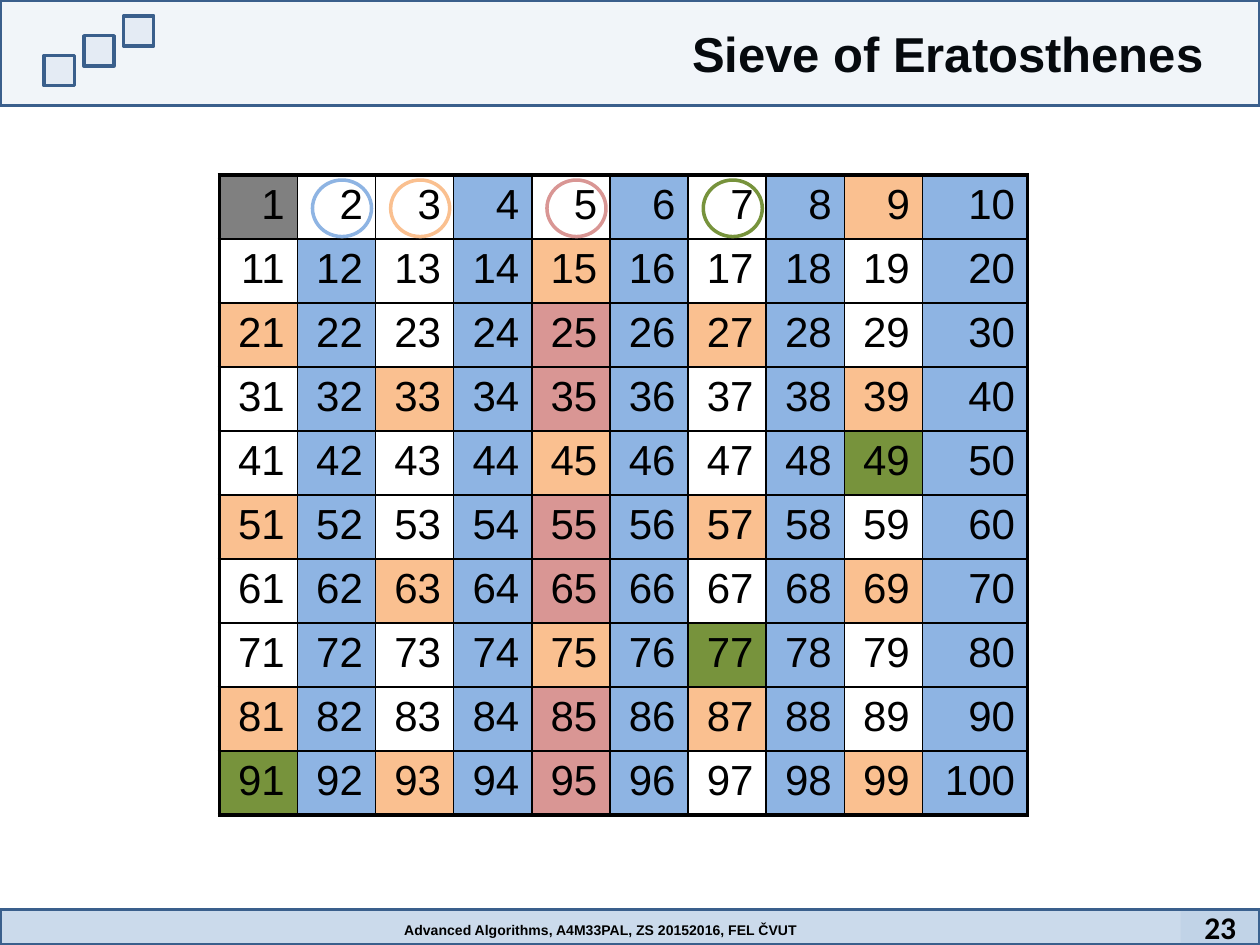
from lxml import etree
from pptx import Presentation
from pptx import util as u
from pptx.dml.color import RGBColor
from pptx.enum import shapes, text
from pptx.oxml.ns import qn

# Content
TITLE = "Sieve of Eratosthenes"
FOOTER = "Advanced Algorithms, A4M33PAL, ZS 20152016, FEL ČVUT"
PAGE = "23"
SIZE = 10
SIEVING_PRIMES = (2, 3, 5, 7)

THEME = {
    "font": "Arial", "page_font": "Calibri",
    "title": 28, "number": 24, "footer": 8, "page": 18,
    "ink": "000000", "one": "808080", "band": "4F81BD", "edge": "3A5F8C",
    "primes": {2: "8EB4E3", 3: "FAC090", 5: "D99694", 7: "77933C"},
    "thin": 1, "thick": 2.25, "outline": 2,
}

# Geometry in centimetres
SLIDE_W, SLIDE_H = 25.4, 19.05
HEADER_H, FOOTER_H = 2.13, 0.71
TABLE_X, TABLE_Y, TABLE_W, ROW_H = 4.42, 3.53, 16.3, 1.29
LAST_COL_W = 2.12
COL_W = (TABLE_W - LAST_COL_W) / (SIZE - 1)
RING_X, RING_Y, RING_W, RING_H = 6.3, 3.63, 1.19, 1.14
SQUARE, SQUARE_X, SQUARE_Y, SQUARE_STEP = 0.61, 0.89, 1.12, (0.8, -0.4)


def color(value):
    return RGBColor.from_string(value)


def box(*lengths):
    return [u.Cm(length) for length in lengths]


def write(frame, words, size, align, font=THEME["font"], bold=True):
    frame.text = words
    paragraph = frame.paragraphs[0]
    paragraph.alignment = align
    paragraph.font.name = font
    paragraph.font.size = u.Pt(size)
    paragraph.font.bold = bold
    paragraph.font.color.rgb = color(THEME["ink"])


def add_figure(slide, kind, place, line=None, opacity=None):
    """Add a shape with an optional outline and translucent fill."""
    shape = slide.shapes.add_shape(kind, *box(*place))
    shape.shadow.inherit = False
    if opacity is None:
        shape.fill.background()
    else:
        shape.fill.solid()
        shape.fill.fore_color.rgb = color(THEME["band"])
        tint = shape.fill._xPr.find(".//" + qn("a:srgbClr"))
        etree.SubElement(tint, qn("a:alpha"), val=str(opacity * 1000))
    if line:
        shape.line.color.rgb = color(line)
        shape.line.width = u.Pt(THEME["outline"])
    else:
        shape.line.fill.background()
    return shape


def cell_color(number):
    """Colour of the prime that strikes the number out, if any."""
    if number == 1:
        return THEME["one"]
    for prime in SIEVING_PRIMES:
        if number > prime and number % prime == 0:
            return THEME["primes"][prime]
    return None


def set_borders(cell, row, col):
    properties = cell._tc.get_or_add_tcPr()
    outer = {"lnL": col == 0, "lnR": col == SIZE - 1,
             "lnT": row == 0, "lnB": row == SIZE - 1}
    for position, (side, is_outer) in enumerate(outer.items()):
        width = u.Pt(THEME["thick" if is_outer else "thin"])
        border = etree.Element(qn("a:" + side), w=str(int(width)))
        fill = etree.SubElement(border, qn("a:solidFill"))
        etree.SubElement(fill, qn("a:srgbClr"), val=THEME["ink"])
        properties.insert(position, border)


def add_sieve(slide):
    place = box(TABLE_X, TABLE_Y, TABLE_W, ROW_H * SIZE)
    table = slide.shapes.add_table(SIZE, SIZE, *place).table
    table.first_row = table.horz_banding = False
    for col in range(SIZE):
        table.columns[col].width = u.Cm(LAST_COL_W if col == SIZE - 1 else COL_W)
    for row in range(SIZE):
        table.rows[row].height = u.Cm(ROW_H)
        for col in range(SIZE):
            number = row * SIZE + col + 1
            cell = table.cell(row, col)
            write(cell.text_frame, str(number), THEME["number"],
                  text.PP_ALIGN.RIGHT, bold=False)
            shade = cell_color(number)
            if shade:
                cell.fill.solid()
                cell.fill.fore_color.rgb = color(shade)
            else:
                cell.fill.background()
            set_borders(cell, row, col)


def main():
    presentation = Presentation()
    presentation.slide_width, presentation.slide_height = box(SLIDE_W, SLIDE_H)
    slide = presentation.slides.add_slide(presentation.slide_layouts[5])
    rectangle = shapes.MSO_SHAPE.RECTANGLE

    # Title
    title = slide.shapes.title
    title.left, title.top, title.width, title.height = box(7.9, 0.35, 16.61, 1.45)
    title.text_frame.vertical_anchor = text.MSO_ANCHOR.MIDDLE
    write(title.text_frame, TITLE, THEME["title"], text.PP_ALIGN.RIGHT)

    # Number grid, with a ring round each sieving prime
    add_sieve(slide)
    for prime in SIEVING_PRIMES:
        left = RING_X + (prime - SIEVING_PRIMES[0]) * COL_W
        add_figure(slide, shapes.MSO_SHAPE.OVAL, (left, RING_Y, RING_W, RING_H),
                   THEME["primes"][prime])

    # Header band and its staircase of squares
    add_figure(slide, rectangle, (0, 0, SLIDE_W, HEADER_H), THEME["edge"], 8)
    for step in range(3):
        left = SQUARE_X + step * SQUARE_STEP[0]
        top = SQUARE_Y + step * SQUARE_STEP[1]
        add_figure(slide, rectangle, (left, top, SQUARE, SQUARE), THEME["edge"], 8)

    # Footer band, course name and page number
    footer_y = SLIDE_H - FOOTER_H
    add_figure(slide, rectangle, (0, footer_y, SLIDE_W, FOOTER_H), THEME["edge"], 29)
    footer = slide.shapes.add_textbox(*box(7.9, 18.46, 8.56, 0.6)).text_frame
    footer.word_wrap = False
    write(footer, FOOTER, THEME["footer"], text.PP_ALIGN.LEFT)
    page = add_figure(slide, rectangle, (23.8, footer_y, 1.6, FOOTER_H), opacity=8)
    page.text_frame.vertical_anchor = text.MSO_ANCHOR.MIDDLE
    write(page.text_frame, PAGE, THEME["page"], text.PP_ALIGN.CENTER,
          THEME["page_font"])

    presentation.save("out.pptx")


if __name__ == "__main__":
    main()
